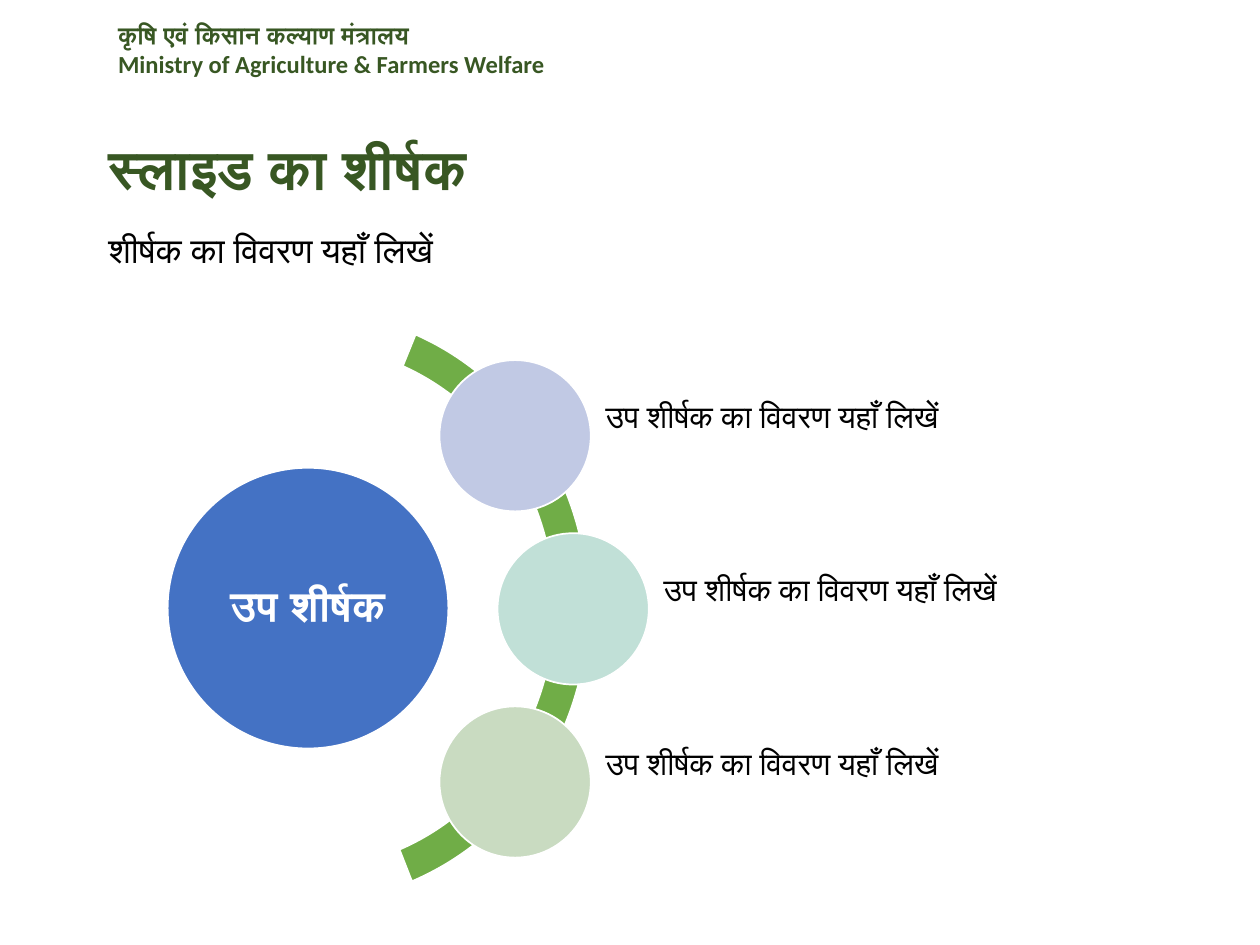
from dataclasses import dataclass

from lxml.etree import SubElement
from pptx import Presentation
from pptx.dml.color import RGBColor
from pptx.enum.shapes import MSO_SHAPE
from pptx.enum.text import MSO_ANCHOR, MSO_AUTO_SIZE, PP_ALIGN
from pptx.oxml.ns import qn
from pptx.util import Cm, Pt


@dataclass(frozen=True)
class Theme:
    font: str = "Calibri"
    heading: str = "385723"
    text: str = "000000"
    white: str = "FFFFFF"
    hub: str = "4472C4"
    arc: str = "70AD47"
    nodes: tuple = ("C1C9E4", "C1E0D7", "C9DBC1")
    header_size: float = 14
    title_size: float = 31.4
    body_size: float = 20
    hub_size: float = 24
    node_size: float = 18


theme = Theme()


def write(holder, text, size, color=theme.text, bold=False, spacing=1.0,
          align=PP_ALIGN.LEFT, anchor=MSO_ANCHOR.TOP, inset=None):
    """Fill a text holder, one paragraph for each line of text."""
    frame = holder.text_frame
    frame.word_wrap = True
    frame.auto_size = MSO_AUTO_SIZE.NONE
    frame.vertical_anchor = anchor
    if inset is not None:
        frame.margin_left = frame.margin_right = inset
        frame.margin_top = frame.margin_bottom = inset
    frame.text = text
    for paragraph in frame.paragraphs:
        paragraph.alignment = align
        paragraph.line_spacing = spacing
        paragraph.space_before = Pt(0)
        properties = paragraph._p.get_or_add_pPr()
        properties.set("marL", "0")
        properties.set("indent", "0")
        SubElement(properties, qn("a:buNone"))
        for run in paragraph.runs:
            run.font.name = theme.font
            run.font.size = Pt(size)
            run.font.bold = bold
            run.font.color.rgb = RGBColor.from_string(color)


def add_figure(kind, left, top, width, height, fill):
    """Add a filled shape with a thin white outline."""
    figure = slide.shapes.add_shape(kind, Cm(left), Cm(top), Cm(width), Cm(height))
    figure.shadow.inherit = False
    figure.fill.solid()
    figure.fill.fore_color.rgb = RGBColor.from_string(fill)
    figure.line.color.rgb = RGBColor.from_string(theme.white)
    figure.line.width = Pt(1)
    return figure


presentation = Presentation()
presentation.slide_width, presentation.slide_height = Cm(25.4), Cm(19.05)
slide = presentation.slides.add_slide(presentation.slide_layouts[1])

# Ministry header
ministry = slide.shapes.add_textbox(Cm(2.13), Cm(0.28), Cm(11.1), Cm(1.45))
write(ministry, "कृषि एवं किसान कल्याण मंत्रालय\nMinistry of Agriculture & Farmers Welfare",
      size=theme.header_size, color=theme.heading, bold=True)

# Title and description
title, description = slide.shapes.title, slide.placeholders[1]
title.left, title.top, title.width, title.height = Cm(1.93), Cm(2.95), Cm(11.68), Cm(1.19)
write(title, "स्लाइड का शीर्षक", size=theme.title_size, color=theme.heading,
      bold=True, spacing=0.7)
description.left, description.top = Cm(1.93), Cm(4.57)
description.width, description.height = Cm(13.69), Cm(0.94)
write(description, "शीर्षक का विवरण यहाँ लिखें", size=theme.body_size, spacing=0.9)

# Central circle
hub = add_figure(MSO_SHAPE.OVAL, 3.38, 9.43, 5.66, 5.66, theme.hub)
write(hub, "उप शीर्षक", size=theme.hub_size, color=theme.white, bold=True,
      spacing=0.9, align=PP_ALIGN.CENTER, anchor=MSO_ANCHOR.MIDDLE, inset=Cm(0.08))

# Arc behind the nodes
arc = add_figure(MSO_SHAPE.BLOCK_ARC, 0.43, 6.27, 11.43, 11.94, theme.arc)
for index, value in enumerate((175.28, 41.19, 0.06)):
    arc.adjustments[index] = value

# Nodes with their descriptions
node_size, first_top, node_step = 3.05, 7.26, 3.49
for index, (node_left, color) in enumerate(zip((8.86, 10.03, 8.86), theme.nodes)):
    node_top = first_top + index * node_step
    add_figure(MSO_SHAPE.OVAL, node_left, node_top, node_size, node_size, color)
    node_text = slide.shapes.add_textbox(
        Cm(node_left + node_size + 0.22), Cm(node_top + 0.53), Cm(9.75), Cm(1.3))
    write(node_text, "उप शीर्षक का विवरण यहाँ लिखें", size=theme.node_size,
          spacing=0.9, anchor=MSO_ANCHOR.MIDDLE, inset=Cm(0.08))

presentation.save("out.pptx")
